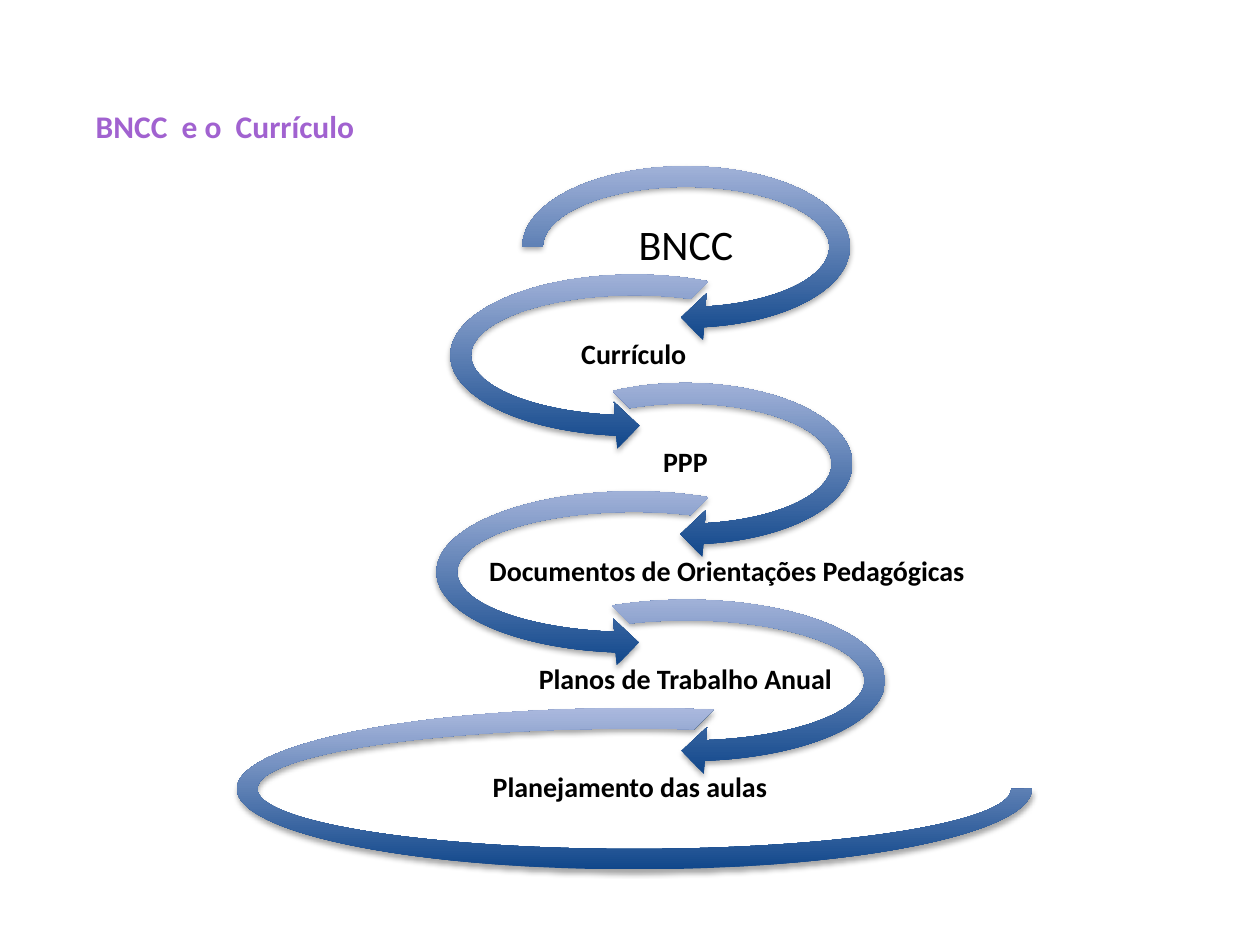
from lxml import etree
from pptx import Presentation
from pptx.dml.color import RGBColor
from pptx.enum.shapes import MSO_SHAPE as SHAPE
from pptx.enum.text import MSO_ANCHOR as ANCHOR, MSO_AUTO_SIZE as AUTO, PP_ALIGN as ALIGN
from pptx.oxml import parse_xml
from pptx.util import Inches, Pt

PURPLE = RGBColor(0xA1, 0x62, 0xD0)
BLACK = RGBColor(0, 0, 0)
DARK_BLUE = RGBColor(0x11, 0x47, 0x8B)
LIGHT_BLUE = RGBColor(0xAB, 0xB9, 0xDE)
FONT = "Calibri"

TITLE = "BNCC  e o  Currículo"
FIRST = (SHAPE.CIRCULAR_ARROW, (0.11, 11.42, 45, 108, 0.125), 1.49)
RIGHT = (SHAPE.CIRCULAR_ARROW, (0.11, 11.42, 45, 135, 0.125), 1.49)
LEFT = (SHAPE.LEFT_CIRCULAR_ARROW, (0.11, 11.42, 63, 189, 0.125), 1.49)
LAST = (SHAPE.BLOCK_ARC, (0, 189, 0.127), 1.28)

# label, label left, label width, ring kind, ring left, ring width
STEPS = [
    ("BNCC", 5.03, 0.83, FIRST, 4.04, 2.81),
    ("Currículo", 3.73, 2.6, LEFT, 3.47, 3.13),
    ("PPP", 4.19, 2.5, RIGHT, 4.01, 2.86),
    ("Documentos de Orientações Pedagógicas ", 3.37, 4.85, LEFT, 3.36, 3.34),
    ("Planos de Trabalho Anual", 3.73, 3.42, RIGHT, 3.77, 3.36),
    ("Planejamento das aulas ", 3.11, 3.83, LAST, 1.88, 6.31),
]
FIRST_CENTER, ROW_STEP, LABEL_HEIGHT = 1.96, 0.86, 0.42

SHADOW = (
    '<a:outerShdw xmlns:a="http://schemas.openxmlformats.org/drawingml/2006/main" '
    'blurRad="40000" dist="23000" dir="5400000" rotWithShape="0">'
    '<a:srgbClr val="000000"><a:alpha val="35000"/></a:srgbClr></a:outerShdw>'
)


def write(tf, text, size, color, bold, align):
    tf.word_wrap = True
    tf.auto_size = AUTO.NONE
    p = tf.paragraphs[0]
    p.alignment = align
    p.line_spacing = 0.9
    r = p.add_run()
    r.text = text
    r.font.name = FONT
    r.font.size = Pt(size)
    r.font.bold = bold
    r.font.color.rgb = color


def add_ring(slide, kind, left, center, width):
    preset, adjustments, height = kind
    sp = slide.shapes.add_shape(preset, Inches(left), Inches(center - height / 2),
                                Inches(width), Inches(height))
    for i, value in enumerate(adjustments):
        sp.adjustments[i] = value
    sp.fill.gradient()
    sp.fill.gradient_angle = 90
    for stop, color in zip(sp.fill.gradient_stops, (DARK_BLUE, LIGHT_BLUE)):
        stop.color.rgb = color
    sp.line.fill.background()
    sp.shadow.inherit = False
    sp.element.spPr.find("{*}effectLst").append(parse_xml(SHADOW))


def add_label(slide, text, left, center, width, size, bold, inset):
    box = slide.shapes.add_textbox(Inches(left), Inches(center - LABEL_HEIGHT / 2),
                                   Inches(width), Inches(LABEL_HEIGHT))
    tf = box.text_frame
    tf.margin_left = tf.margin_right = tf.margin_top = tf.margin_bottom = Inches(inset)
    tf.vertical_anchor = ANCHOR.MIDDLE
    write(tf, text, size, BLACK, bold, ALIGN.CENTER)


prs = Presentation()
prs.slide_width, prs.slide_height = Inches(10), Inches(7.5)
slide = prs.slides.add_slide(prs.slide_layouts[5])

title = slide.shapes.title
title.left, title.top = Inches(0.66), Inches(0.83)
title.width, title.height = Inches(5.47), Inches(0.43)
title.text_frame.vertical_anchor = ANCHOR.TOP
write(title.text_frame, TITLE, 18, PURPLE, True, ALIGN.LEFT)

for row, (text, left, width, kind, ring_left, ring_width) in enumerate(STEPS):
    center = FIRST_CENTER + row * ROW_STEP
    add_ring(slide, kind, ring_left, center, ring_width)
    size, bold, inset = (24, False, 0.02) if row == 0 else (16, True, 0.01)
    add_label(slide, text, left, center, width, size, bold, inset)

prs.save("out.pptx")
